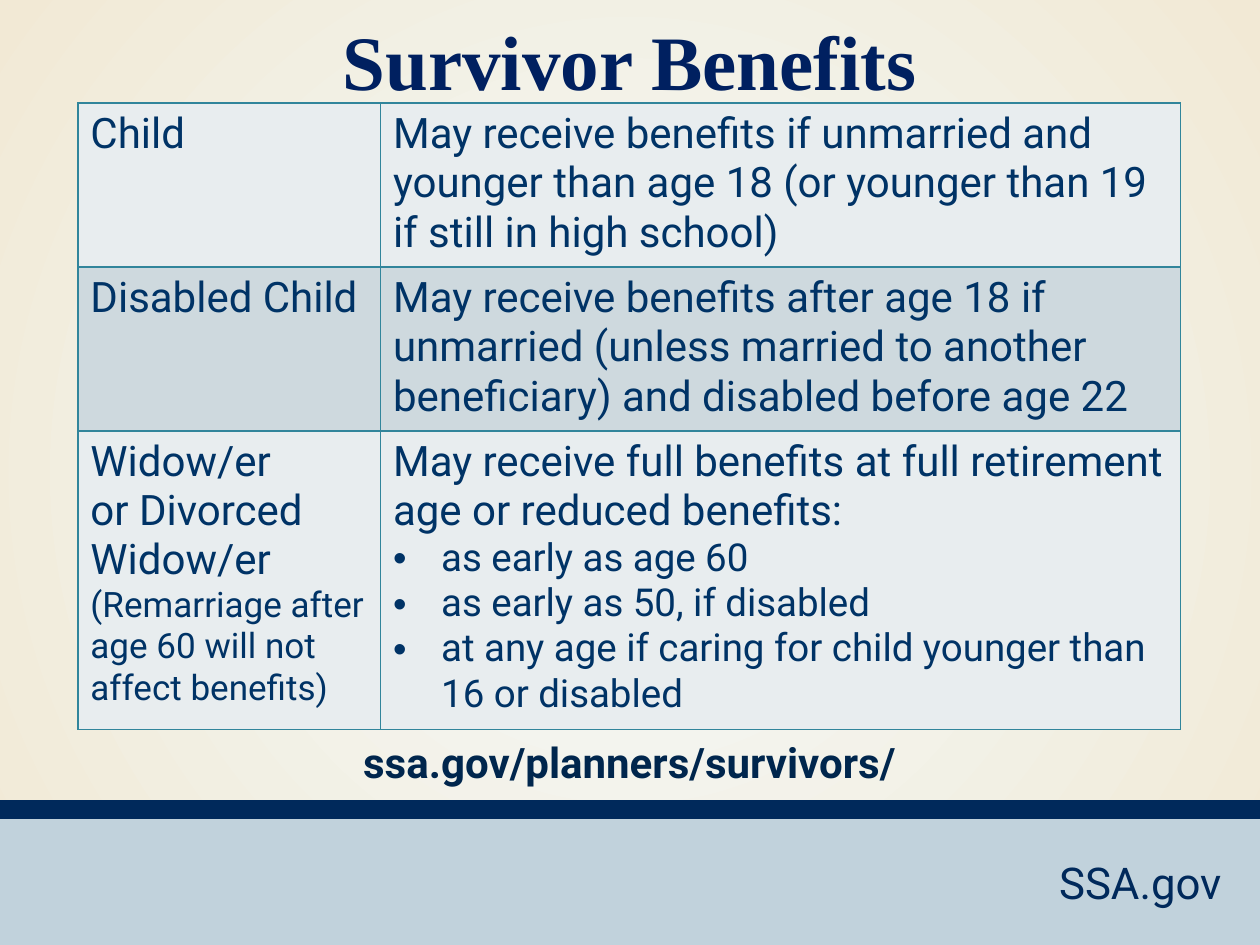
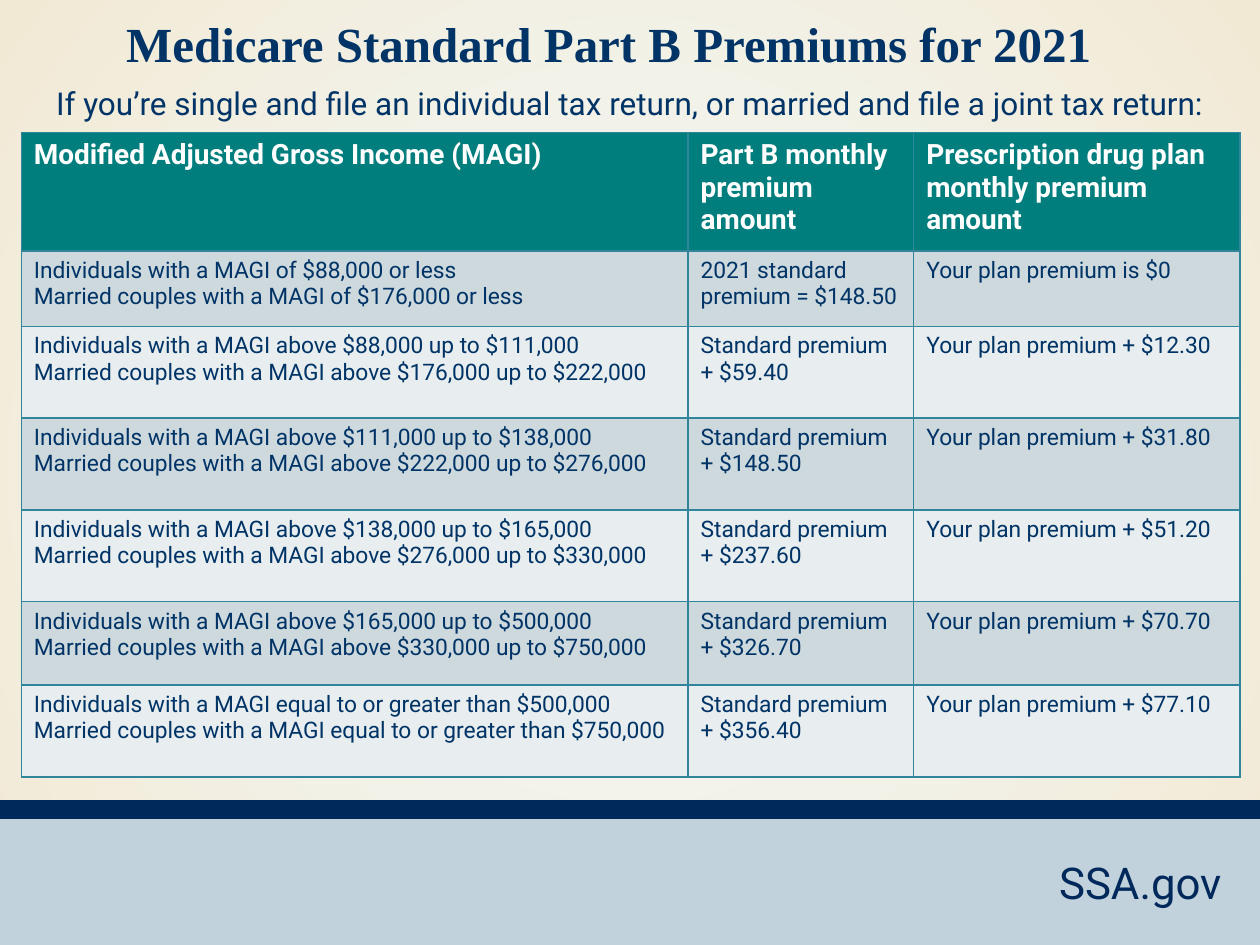
from lxml import etree
from pptx import Presentation
from pptx.dml.color import RGBColor
from pptx.enum.shapes import MSO_SHAPE
from pptx.enum.text import PP_ALIGN
from pptx.oxml.ns import qn
from pptx.util import Cm, Pt

RECT = MSO_SHAPE.RECTANGLE
LEFT, CENTER, RIGHT = PP_ALIGN.LEFT, PP_ALIGN.CENTER, PP_ALIGN.RIGHT

# Shared look
SLIDE_W, SLIDE_H = 25.4, 19.05
BODY_FONT, TITLE_FONT = "Roboto", "Times New Roman"
NAVY, INK, TITLE_NAVY, LINK_NAVY = "00295B", "003366", "002060", "00264D"
FOOTER_BLUE, BORDER, HEADER_TEAL, WHITE = "C1D2DC", "31859B", "007D7D", "FFFFFF"
LIGHT_ROW, DARK_ROW = "E8EDEF", "CED9DE"
GLOW_CENTER, GLOW_EDGE = "F3FAFB", "F2E9D5"
BULLET_INDENT = Cm(0.97)

# Table content: a cell is a list of (text, size, bulleted)
SURVIVOR_ROWS = [
    [[("Child", 24, False)],
     [("May receive benefits if unmarried and younger than age 18 "
       "(or younger than 19 if still in high school)", 24, False)]],
    [[("Disabled Child", 24, False)],
     [("May receive benefits after age 18 if unmarried (unless married to "
       "another beneficiary) and disabled before age 22", 24, False)]],
    [[("Widow/er", 24, False),
      ("or Divorced Widow/er", 24, False),
      ("(Remarriage after age 60 will not affect benefits)", 20, False)],
     [("May receive full benefits at full retirement age or reduced benefits:",
       24, False),
      ("as early as age 60", 22, True),
      ("as early as 50, if disabled", 22, True),
      ("at any age if caring for child younger than 16 or disabled", 22, True)]],
]

PREMIUM_HEADERS = [
    "Modified Adjusted Gross Income (MAGI)",
    "Part B monthly premium amount",
    "Prescription drug plan monthly premium amount",
]
# Individual income, couple income, Part B premium lines, drug plan premium
PREMIUMS = [
    ("of $88,000 or less", "of $176,000 or less",
     ["2021 standard premium = $148.50"], "is $0"),
    ("above $88,000 up to $111,000", "above $176,000 up to $222,000",
     ["Standard premium", "+ $59.40"], "+ $12.30"),
    ("above $111,000 up to $138,000", "above $222,000 up to $276,000",
     ["Standard premium", "+ $148.50"], "+ $31.80"),
    ("above $138,000 up to $165,000", "above $276,000 up to $330,000",
     ["Standard premium", "+ $237.60"], "+ $51.20"),
    ("above $165,000 up to $500,000", "above $330,000 up to $750,000",
     ["Standard premium", "+ $326.70"], "+ $70.70"),
    ("equal to or greater than $500,000", "equal to or greater than $750,000",
     ["Standard premium", "+ $356.40"], "+ $77.10"),
]


def color(value):
    return RGBColor.from_string(value)


def format_paragraph(p, size, ink, font=BODY_FONT, bold=False, align=LEFT):
    p.alignment = align
    for r in p.runs:
        r.font.name = font
        r.font.size = Pt(size)
        r.font.bold = bold
        r.font.color.rgb = color(ink)


def add_text(slide, box, text, size, ink, font=BODY_FONT, bold=False,
             align=CENTER, inset_top=0.13):
    sp = slide.shapes.add_textbox(*map(Cm, box))
    tf = sp.text_frame
    tf.word_wrap = True
    tf.margin_top = Cm(inset_top)
    tf.text = text
    format_paragraph(tf.paragraphs[0], size, ink, font, bold, align)


def add_title(slide, left, height, text, size, ink):
    add_text(slide, (left, 0, SLIDE_W, height), text, size, ink,
             TITLE_FONT, True, inset_top=0.28)


def add_band(slide, top, height, fill):
    sp = slide.shapes.add_shape(RECT, 0, Cm(top), Cm(SLIDE_W), Cm(height))
    sp.shadow.inherit = False
    sp.fill.solid()
    sp.fill.fore_color.rgb = color(fill)
    sp.line.fill.background()


def add_background(slide):
    fill = slide.background.fill
    fill.gradient()
    for stop, value, position in zip(fill.gradient_stops,
                                     (GLOW_CENTER, GLOW_EDGE), (0, 1)):
        stop.color.rgb = color(value)
        stop.position = position
    # Turn the linear gradient into a circular one
    lin = next(slide.element.iter(qn("a:lin")))
    glow = etree.Element(qn("a:path"))
    glow.set("path", "circle")
    center = etree.SubElement(glow, qn("a:fillToRect"))
    for side in "ltrb":
        center.set(side, "50000")
    lin.getparent().replace(lin, glow)


def add_framed_slide(prs):
    slide = prs.slides.add_slide(prs.slide_layouts[6])
    add_background(slide)
    add_band(slide, 16.38, 2.67, FOOTER_BLUE)
    add_band(slide, 16.13, 0.38, NAVY)
    add_text(slide, (17.07, 17.12, 7.8, 1.32), "SSA.gov", 25, NAVY, align=RIGHT)
    return slide


def set_borders(cell):
    tc_pr = cell._tc.get_or_add_tcPr()
    for side in ("a:lnL", "a:lnR", "a:lnT", "a:lnB"):
        ln = etree.SubElement(tc_pr, qn(side), w=str(Pt(1)))
        solid = etree.SubElement(ln, qn("a:solidFill"))
        etree.SubElement(solid, qn("a:srgbClr"), val=BORDER)


def set_bullet(p):
    p_pr = p._p.get_or_add_pPr()
    p_pr.set("marL", str(BULLET_INDENT))
    p_pr.set("indent", str(-BULLET_INDENT))
    etree.SubElement(p_pr, qn("a:buFont"), typeface="Arial")
    etree.SubElement(p_pr, qn("a:buChar"), char="•")


def fill_cell(cell, lines, fill, ink, bold):
    set_borders(cell)
    cell.fill.solid()
    cell.fill.fore_color.rgb = color(fill)
    tf = cell.text_frame
    tf.text = "\n".join(text for text, _, _ in lines)
    for p, (_, size, bulleted) in zip(tf.paragraphs, lines):
        if bulleted:
            set_bullet(p)
        format_paragraph(p, size, ink, bold=bold)


def add_grid(slide, left, top, widths, heights, rows, has_header=False):
    frame = slide.shapes.add_table(
        len(rows), len(widths), Cm(left), Cm(top),
        Cm(sum(widths)), Cm(sum(heights)))
    table = frame.table
    table.first_row = has_header
    table.horz_banding = False
    for column, width in zip(table.columns, widths):
        column.width = Cm(width)
    for i, (row, height) in enumerate(zip(rows, heights)):
        table.rows[i].height = Cm(height)
        header = has_header and i == 0
        fill = HEADER_TEAL if header else (LIGHT_ROW, DARK_ROW)[i % 2]
        for j, lines in enumerate(row):
            fill_cell(table.cell(i, j), lines, fill,
                      WHITE if header else INK, header)


def premium_rows():
    rows = [[[(text, 16, False)] for text in PREMIUM_HEADERS]]
    for single, couple, part_b, drug_plan in PREMIUMS:
        cells = [
            [f"Individuals with a MAGI {single}",
             f"Married couples with a MAGI {couple}"],
            part_b,
            [f"Your plan premium {drug_plan}"],
        ]
        rows.append([[(text, 13, False) for text in cell] for cell in cells])
    return rows


def build_survivor_slide(prs):
    slide = add_framed_slide(prs)
    add_text(slide, (2.57, 14.71, 20.24, 1.27), "ssa.gov/planners/survivors/",
             24, LINK_NAVY, bold=True)
    add_grid(slide, 1.57, 2.08, (6.1, 16.13), (3.3, 3.3, 6.02), SURVIVOR_ROWS)
    add_title(slide, 0, 1.85, "Survivor Benefits", 44, TITLE_NAVY)


def build_premium_slide(prs):
    slide = add_framed_slide(prs)
    add_title(slide, -0.43, 1.52, "Medicare Standard Part B Premiums for 2021",
              28, INK)
    add_text(slide, (0, 1.57, SLIDE_W, 1.09),
             "If you’re single and file an individual tax return, "
             "or married and file a joint tax return:", 18, INK)
    add_grid(slide, 0.43, 2.67, (13.44, 4.55, 6.58),
             (2.39, 1.52, 1.85, 1.85, 1.85, 1.68, 1.85),
             premium_rows(), has_header=True)


def main():
    prs = Presentation()
    prs.slide_width, prs.slide_height = Cm(SLIDE_W), Cm(SLIDE_H)
    build_survivor_slide(prs)
    build_premium_slide(prs)
    prs.save("out.pptx")


if __name__ == "__main__":
    main()
